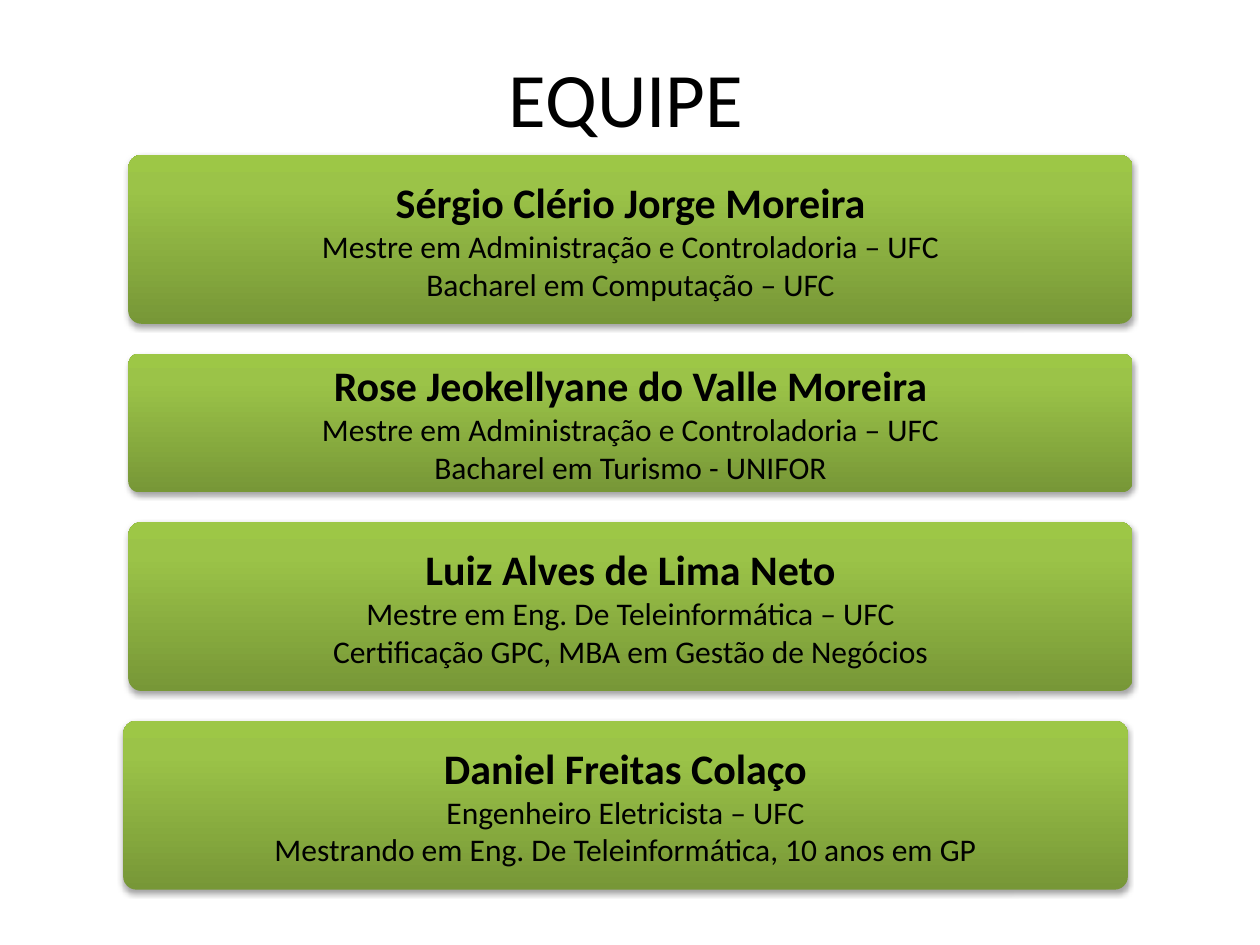
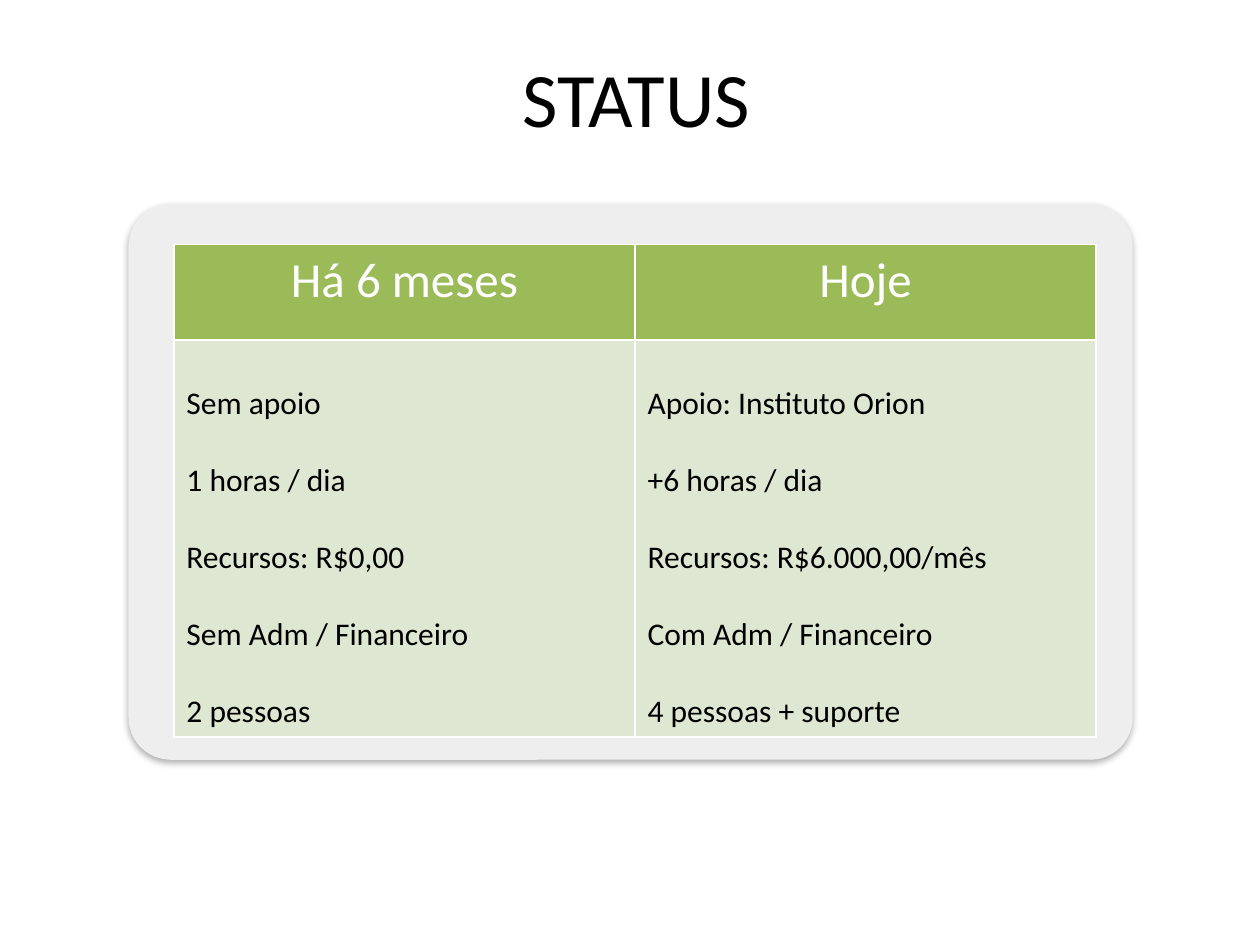
from dataclasses import dataclass

from lxml.etree import SubElement
from pptx import Presentation
from pptx.dml.color import RGBColor
from pptx.enum.shapes import MSO_SHAPE
from pptx.enum.text import MSO_ANCHOR, PP_ALIGN
from pptx.oxml.ns import qn
from pptx.util import Inches, Pt


@dataclass(frozen=True)
class Theme:
    font: str = "Calibri"
    ink: RGBColor = RGBColor.from_string("000000")
    white: RGBColor = RGBColor.from_string("FFFFFF")
    panel: RGBColor = RGBColor.from_string("EEEEEE")
    header: RGBColor = RGBColor.from_string("9BBB59")
    body: RGBColor = RGBColor.from_string("DEE7D1")
    card_stops: tuple = ((0, "779737"), (80, "9BC348"), (100, "9DC746"))
    title_size: Pt = Pt(44)
    header_size: Pt = Pt(28)
    name_size: Pt = Pt(24)
    text_size: Pt = Pt(18)
    line_gap: Pt = Pt(22)
    border: Pt = Pt(1)


theme = Theme()
deck = Presentation()
deck.slide_width, deck.slide_height = Inches(10), Inches(7.5)
COL = deck.slide_width / 100
ROW = deck.slide_height / 75
PANEL_LEFT, PANEL_WIDTH = 10.2, 79.7


def add_title(slide, left, wording):
    title = slide.shapes.add_textbox(
        int(left * COL), int(1.4 * ROW), int(71.8 * COL), int(12.5 * ROW))
    frame = title.text_frame
    frame.word_wrap = True
    frame.vertical_anchor = MSO_ANCHOR.MIDDLE
    heading = frame.paragraphs[0]
    heading.text = wording
    heading.alignment = PP_ALIGN.CENTER
    heading.font.name = theme.font
    heading.font.size = theme.title_size
    heading.font.color.rgb = theme.ink


def add_panel(slide, left, top, height, opacity, blur, distance):
    panel = slide.shapes.add_shape(
        MSO_SHAPE.ROUNDED_RECTANGLE,
        int(left * COL), int(top * ROW), int(PANEL_WIDTH * COL), int(height * ROW))
    panel.adjustments[0] = 0.076
    panel.line.fill.background()
    panel.shadow.inherit = False
    effects = panel._element.spPr.find(qn("a:effectLst"))
    shadow = SubElement(
        effects, qn("a:outerShdw"), blurRad=str(Pt(blur)), dist=str(Pt(distance)),
        dir="5400000", rotWithShape="0")
    shade = SubElement(shadow, qn("a:srgbClr"), val=str(theme.ink))
    SubElement(shade, qn("a:alpha"), val=str(opacity * 1000))
    return panel


team = [
    (PANEL_LEFT, 13.4, "Sérgio Clério Jorge Moreira",
     "Mestre em Administração e Controladoria – UFC", "Bacharel em Computação – UFC"),
    (PANEL_LEFT, 11, "Rose Jeokellyane do Valle Moreira",
     "Mestre em Administração e Controladoria – UFC", "Bacharel em Turismo - UNIFOR"),
    (PANEL_LEFT, 13.4, "Luiz Alves de Lima Neto",
     "Mestre em Eng. De Teleinformática – UFC",
     "Certificação GPC, MBA em Gestão de Negócios"),
    (9.8, 13.4, "Daniel Freitas Colaço",
     "Engenheiro Eletricista – UFC",
     "Mestrando em Eng. De Teleinformática, 10 anos em GP"),
]

team_slide = deck.slides.add_slide(deck.slide_layouts[6])
card_top = 12.3
for left, height, *lines in team:
    card = add_panel(team_slide, left, card_top, height, 35, 3.1, 1.8)
    card.fill.gradient()
    card.fill.gradient_angle = 90
    stops = card._element.spPr.find(".//" + qn("a:gsLst"))
    stops.clear()
    for position, colour in theme.card_stops:
        stop = SubElement(stops, qn("a:gs"), pos=str(position * 1000))
        SubElement(stop, qn("a:srgbClr"), val=colour)
    frame = card.text_frame
    frame.word_wrap = False
    frame.vertical_anchor = MSO_ANCHOR.MIDDLE
    frame.text = "\n".join(lines)
    for index, line in enumerate(frame.paragraphs):
        line.alignment = PP_ALIGN.CENTER
        line.font.name = theme.font
        line.font.size = theme.text_size if index else theme.name_size
        line.font.bold = index == 0
        line.font.color.rgb = theme.ink
    card_top += height + 2.37
add_title(team_slide, 13.8, "EQUIPE")

status = {
    "Há 6 meses": ["Sem apoio", "1 horas / dia", "Recursos: R$0,00",
                   "Sem Adm / Financeiro", "2 pessoas"],
    "Hoje": ["Apoio: Instituto Orion", "+6 horas / dia", "Recursos: R$6.000,00/mês",
             "Com Adm / Financeiro", "4 pessoas + suporte"],
}

status_slide = deck.slides.add_slide(deck.slide_layouts[6])
add_title(status_slide, 14.6, "STATUS")
backdrop = add_panel(status_slide, PANEL_LEFT, 16.2, 44.1, 32, 3.5, 2.2)
backdrop.fill.solid()
backdrop.fill.fore_color.rgb = theme.panel

comparison = status_slide.shapes.add_table(
    2, len(status), int(13.8 * COL), int(19.4 * ROW),
    int(73.2 * COL), int(39.1 * ROW)).table
comparison.horz_banding = False
comparison.rows[0].height = int(7.6 * ROW)
comparison.rows[1].height = int(31.5 * ROW)

for column, (period, facts) in enumerate(status.items()):
    for row, lines in enumerate(([period], facts)):
        cell = comparison.cell(row, column)
        for side in ("a:lnL", "a:lnR", "a:lnT", "a:lnB"):
            edge = SubElement(
                cell._tc.get_or_add_tcPr(), qn(side), w=str(theme.border))
            ink = SubElement(edge, qn("a:solidFill"))
            SubElement(ink, qn("a:srgbClr"), val=str(theme.white))
        cell.fill.solid()
        cell.fill.fore_color.rgb = theme.body if row else theme.header
        cell.margin_top = int((3.55 if row else 0.5) * ROW)
        cell.text = "\n".join(lines)
        for index, line in enumerate(cell.text_frame.paragraphs):
            line.alignment = PP_ALIGN.LEFT if row else PP_ALIGN.CENTER
            if index:
                line.space_before = theme.line_gap
            line.font.name = theme.font
            line.font.bold = False
            line.font.size = theme.text_size if row else theme.header_size
            line.font.color.rgb = theme.ink if row else theme.white

deck.save("out.pptx")
